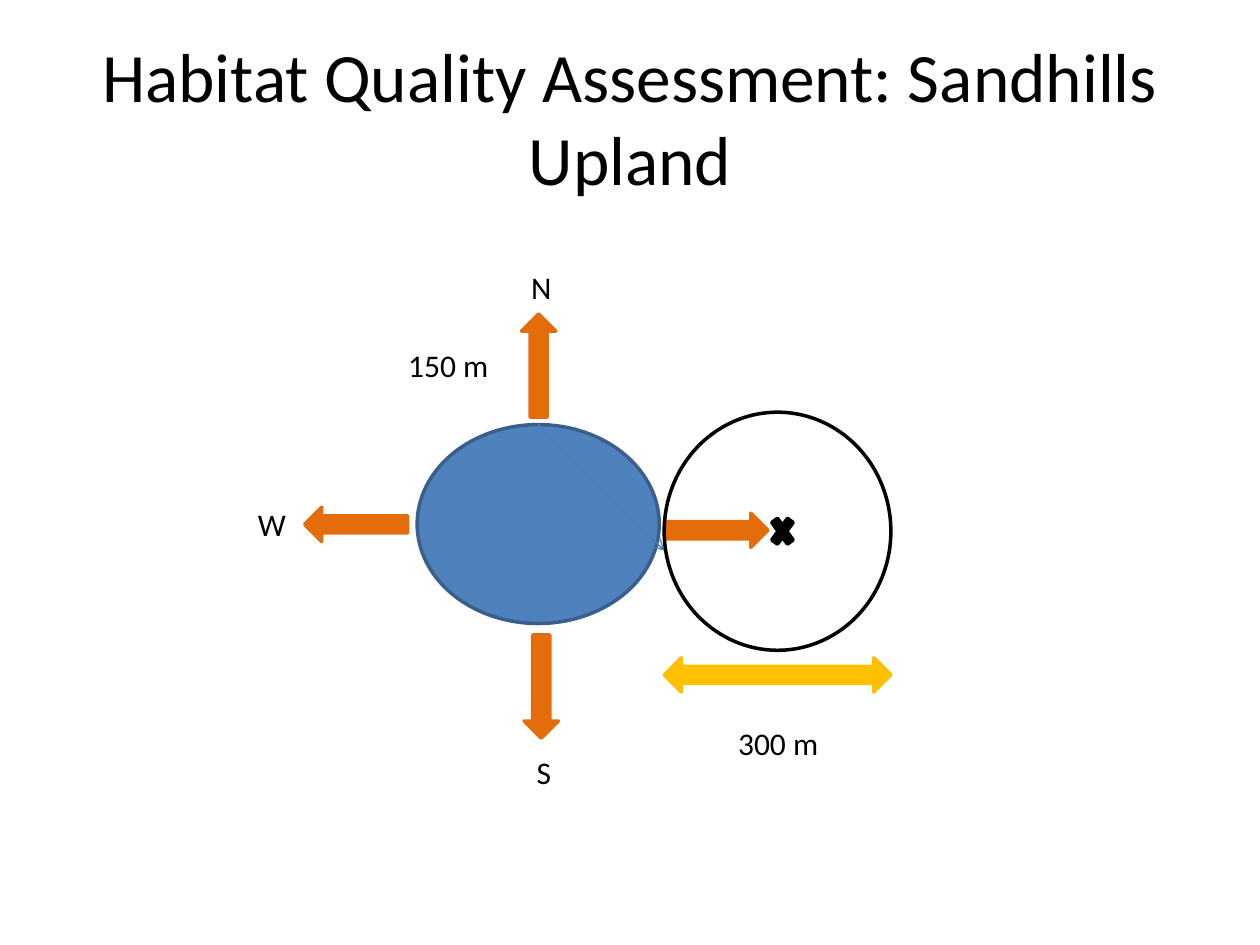
from lxml import etree
from pptx import Presentation
from pptx import util as u
from pptx.dml.color import RGBColor
from pptx.enum import shapes, text
from pptx.oxml.ns import qn

BLACK = RGBColor(0x00, 0x00, 0x00)
BLUE = RGBColor(0x4F, 0x81, 0xBD)
NAVY = RGBColor(0x3A, 0x5F, 0x8C)
MIDBLUE = RGBColor(0x4B, 0x7E, 0xBC)
ORANGE = RGBColor(0xE4, 0x6C, 0x0A)
GOLD = RGBColor(0xFF, 0xC0, 0x00)
KIND = shapes.MSO_SHAPE


class Board:
    """Holds the text style and the current slide; lengths are in cm."""

    font = {"name": "Calibri", "bold": False}

    def __init__(self, slide):
        self.s = slide

    def fill_text(self, tf, words, size, align, frame):
        for key, value in frame.items():
            setattr(tf, key, value)
        p = tf.paragraphs[0]
        p.alignment = align
        r = p.add_run()
        r.text = words
        for key, value in {**self.font, "size": u.Pt(size)}.items():
            setattr(r.font, key, value)
        r.font.color.rgb = BLACK

    def title(self, words, x, y, w, h):
        sp = self.s.shapes.title
        for key, value in {"left": x, "top": y, "width": w, "height": h}.items():
            setattr(sp, key, u.Cm(value))
        self.fill_text(sp.text_frame, words, 39.6, text.PP_ALIGN.CENTER,
                       {"vertical_anchor": text.MSO_ANCHOR.MIDDLE, "word_wrap": True,
                        "auto_size": text.MSO_AUTO_SIZE.NONE})

    def label(self, words, x, y, w, h=1.02):
        sp = self.s.shapes.add_textbox(u.Cm(x), u.Cm(y), u.Cm(w), u.Cm(h))
        self.fill_text(sp.text_frame, words, 18, text.PP_ALIGN.LEFT,
                       {"word_wrap": False,
                        "auto_size": text.MSO_AUTO_SIZE.SHAPE_TO_FIT_TEXT})

    def shape(self, kind, x, y, w, h, fill, line, turn=0):
        sp = self.s.shapes.add_shape(kind, u.Cm(x), u.Cm(y), u.Cm(w), u.Cm(h))
        sp.shadow.inherit = False
        sp.rotation = turn
        if fill is None:
            sp.fill.background()
        else:
            sp.fill.solid()
            sp.fill.fore_color.rgb = fill
        sp.line.color.rgb = line
        sp.line.width = u.Pt(2)
        return sp

    def heading(self, cx, cy, turn, w=0.69, h=2.08):
        """Block arrow centred on a point and turned to its compass direction."""
        self.shape(KIND.UP_ARROW, cx - w / 2, cy - h / 2, w, h, ORANGE, ORANGE, turn)

    def arrow(self, start, site, x, y):
        """Thin arrow from a connection site of a shape to a point."""
        c = self.s.shapes.add_connector(shapes.MSO_CONNECTOR.STRAIGHT,
                                        0, 0, u.Cm(x), u.Cm(y))
        c.begin_connect(start, site)
        c.line.color.rgb = MIDBLUE
        c.line.width = u.Pt(0.75)
        props = c._element.spPr
        etree.SubElement(props.find(qn("a:ln")), qn("a:tailEnd"), type="arrow")
        etree.SubElement(props, qn("a:effectLst"))


def main():
    prs = Presentation()
    prs.slide_width, prs.slide_height = u.Cm(25.4), u.Cm(19.05)
    b = Board(prs.slides.add_slide(prs.slide_layouts[5]))
    b.title("Habitat Quality Assessment: Sandhills Upland", 1.27, 0.76, 22.86, 3.18)

    # Wetland with its thin arrow
    wetland = b.shape(KIND.OVAL, 8.41, 8.56, 4.88, 4.01, BLUE, NAVY)
    b.arrow(wetland, 0, 13.39, 11.1)

    # Compass arrows: north, south, west, east
    for cx, cy, turn in [(10.86, 7.37, 0), (10.91, 13.84, 180),
                         (7.18, 10.57, 270), (14.44, 10.69, 90)]:
        b.heading(cx, cy, turn)

    # Distance and direction labels
    for words, x, y, w in [("150 m", 7.98, 6.86, 2.16), ("N", 10.46, 5.28, 0.91),
                           ("W", 4.95, 10.06, 1.09), ("S", 10.57, 15.06, 0.81)]:
        b.label(words, x, y, w)

    # Survey circle, its diameter and its centre mark
    left, width = 13.39, 4.57
    b.shape(KIND.OVAL, left, 8.31, width, 4.8, None, BLACK)
    b.shape(KIND.LEFT_RIGHT_ARROW, left, 13.26, width, 0.69, GOLD, GOLD)
    b.label("300 m", 14.63, 14.48, 2.16)
    b.shape(KIND.MATH_MULTIPLY, 15.47, 10.29, 0.61, 0.84, BLACK, BLACK)

    prs.save("out.pptx")


if __name__ == "__main__":
    main()
